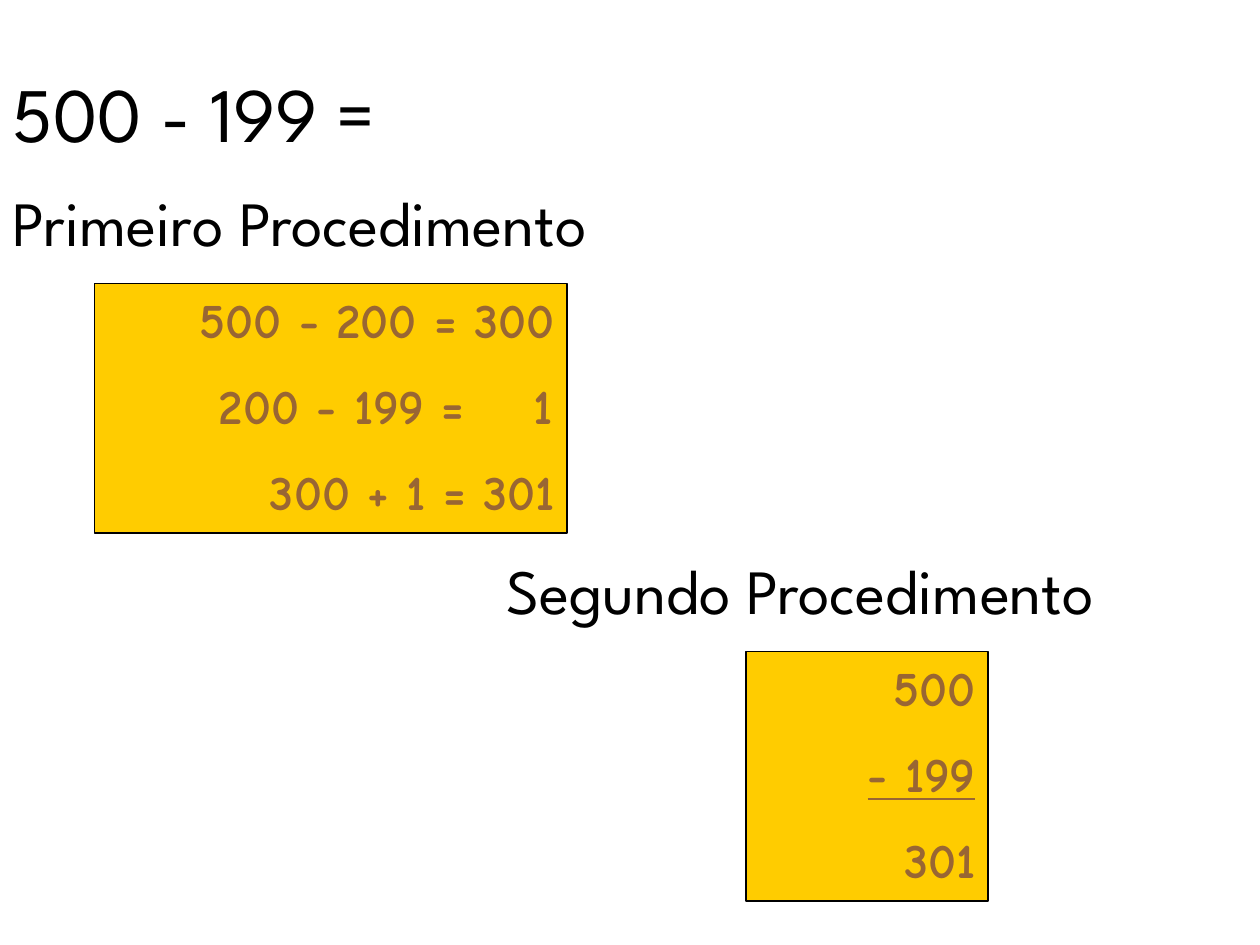
import pptx
import pptx.dml.color
import pptx.enum.shapes
import pptx.enum.text
import pptx.util
from pptx.util import Inches

BLACK = pptx.dml.color.RGBColor(0x00, 0x00, 0x00)
GOLD = pptx.dml.color.RGBColor(0xFF, 0xCC, 0x00)
BROWN = pptx.dml.color.RGBColor(0x99, 0x66, 0x33)
ALIGN = pptx.enum.text.PP_ALIGN


def format_runs(paragraph, font_name, size, color, bold=False):
    for run in paragraph.runs:
        run.font.name = font_name
        run.font.size = pptx.util.Pt(size)
        run.font.color.rgb = color
        run.font.bold = bold


def prepare_frame(frame):
    frame.word_wrap = True
    frame.auto_size = pptx.enum.text.MSO_AUTO_SIZE.NONE
    frame.vertical_anchor = pptx.enum.text.MSO_ANCHOR.TOP


def write_heading(frame, wording, size):
    prepare_frame(frame)
    frame.text = wording
    paragraph = frame.paragraphs[0]
    paragraph.alignment = ALIGN.JUSTIFY
    paragraph.line_spacing = 0.85
    paragraph.space_before = pptx.util.Pt(0)
    format_runs(paragraph, "League Spartan", size, BLACK)


def place_problem(slide, box, wording):
    problem = slide.shapes.title
    problem.left, problem.top, problem.width, problem.height = box
    write_heading(problem.text_frame, wording, 44)


def place_procedure_name(slide, box, wording):
    procedure_name = slide.shapes.add_textbox(*box)
    write_heading(procedure_name.text_frame, wording, 36)


def add_right_tabs(paragraph, positions):
    properties = paragraph._p.get_or_add_pPr()
    tab_list = pptx.oxml.parse_xml(
        '<a:tabLst xmlns:a="http://schemas.openxmlformats.org/drawingml/2006/main"/>')
    for position in positions:
        tab = tab_list.makeelement(pptx.oxml.ns.qn("a:tab"), {"pos": str(position), "algn": "r"})
        tab_list.append(tab)
    properties.append(tab_list)


def place_calculation(slide, box, steps, underlined=None, equals_end=None):
    card = slide.shapes.add_shape(pptx.enum.shapes.MSO_SHAPE.RECTANGLE, *box)
    card.shadow.inherit = False
    card.fill.solid()
    card.fill.fore_color.rgb = GOLD
    card.line.color.rgb = BLACK
    card.line.width = pptx.util.Pt(1)
    prepare_frame(card.text_frame)
    card.text_frame.text = "\n".join(steps)
    result_end = box[2] - Inches(0.21)
    for step, paragraph in zip(steps, card.text_frame.paragraphs):
        paragraph.space_before = pptx.util.Pt(15.5)
        paragraph.alignment = ALIGN.RIGHT
        if "\t" in step:
            paragraph.alignment = ALIGN.LEFT
            add_right_tabs(paragraph, (equals_end, result_end))
        format_runs(paragraph, "Comic Neue", 28, BROWN, bold=True)
        if step == underlined:
            paragraph.runs[0].font.underline = True


def main():
    presentation = pptx.Presentation()
    presentation.slide_width = Inches(10)
    presentation.slide_height = Inches(7.5)
    slide = presentation.slides.add_slide(presentation.slide_layouts[5])

    place_problem(slide, (Inches(0), Inches(0.58), Inches(10), Inches(0.72)), "500 - 199 =")
    place_calculation(
        slide, (Inches(0.75), Inches(2.25), Inches(3.75), Inches(1.98)),
        ("500 - 200 = 300", "\t200 - 199 =\t1", "300 + 1 = 301"),
        equals_end=Inches(2.84))
    place_procedure_name(
        slide, (Inches(0), Inches(1.5), Inches(10), Inches(0.61)), "Primeiro Procedimento")
    place_procedure_name(
        slide, (Inches(3.92), Inches(4.42), Inches(6.08), Inches(0.61)), "Segundo Procedimento")
    place_calculation(
        slide, (Inches(5.92), Inches(5.17), Inches(1.92), Inches(1.98)),
        ("500", "- 199", "301"), underlined="- 199")

    presentation.save("out.pptx")


if __name__ == "__main__":
    main()
